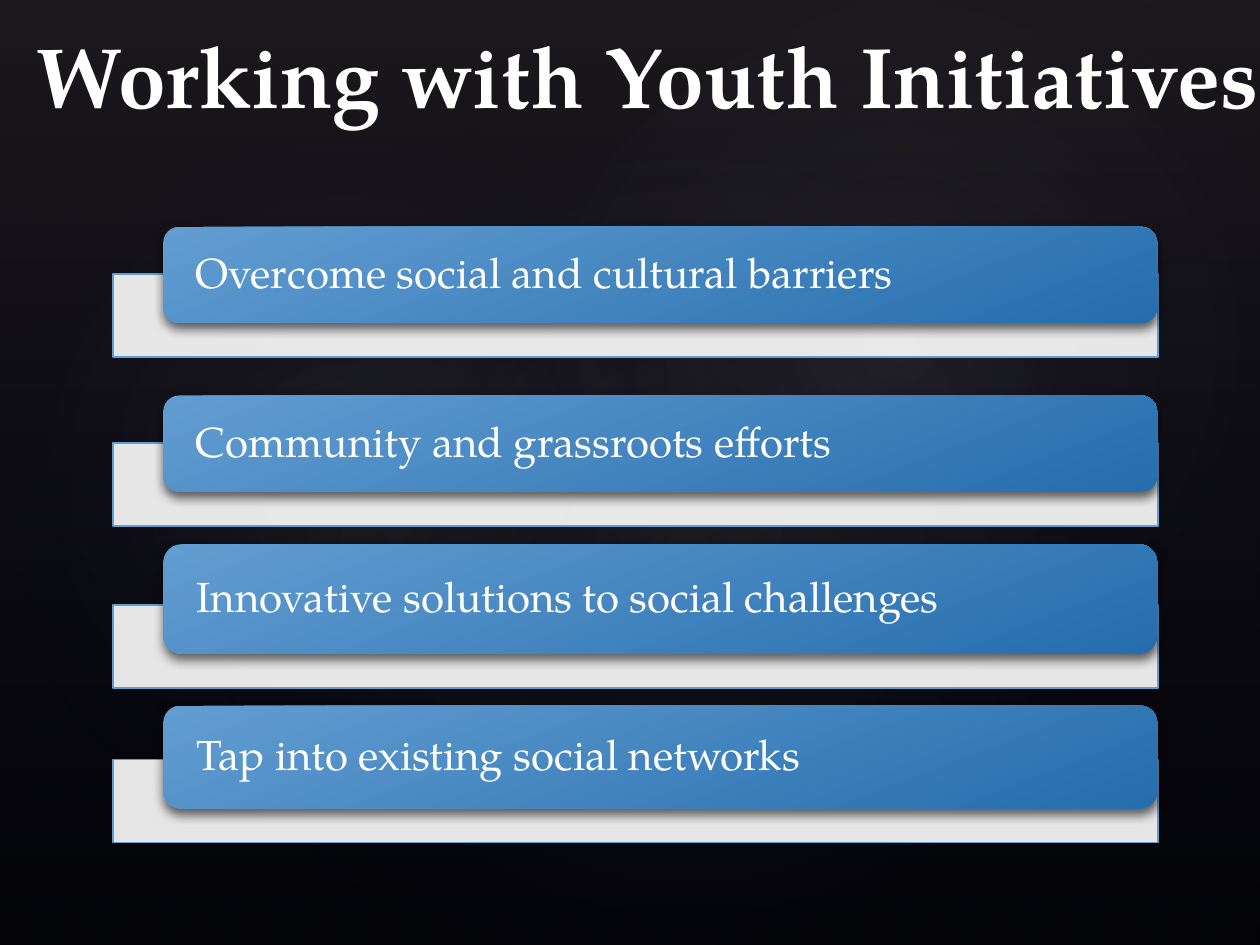
import dataclasses

import pptx
import pptx.dml.color
import pptx.enum.shapes
import pptx.enum.text
import pptx.oxml
import pptx.oxml.ns
import pptx.util

Pt = pptx.util.Pt
RGBColor = pptx.dml.color.RGBColor
Shape = pptx.enum.shapes.MSO_SHAPE
Anchor = pptx.enum.text.MSO_ANCHOR
Align = pptx.enum.text.PP_ALIGN

BLACK = RGBColor(0x00, 0x00, 0x00)
WHITE = RGBColor(0xFF, 0xFF, 0xFF)
PLUM = RGBColor(0x50, 0x46, 0x52)
NAVY = RGBColor(0x24, 0x28, 0x52)
MIST = RGBColor(0xC4, 0xBC, 0xC6)
SKY = RGBColor(0x62, 0x9D, 0xD1)
BLUE = RGBColor(0x25, 0x6D, 0xAD)
FONT = "TeX Gyre Pagella"
NS = pptx.oxml.ns.nsdecls("a")

BAR_LEFT, BAR_WIDTH, BAR_HEIGHT = 64.6, 597, 47.5
CARD_LEFT, CARD_WIDTH = 93.3, 568
OVERLAP = 28  # how far each card reaches down over its bar


@dataclasses.dataclass
class Stop:
    pos: int
    color: RGBColor
    alpha: int = 100


@dataclasses.dataclass
class Glow:
    left: float
    top: float
    width: float
    height: float
    turn: float
    alpha: int


@dataclasses.dataclass
class Card:
    text: str
    top: float
    height: float


GLOWS = [
    Glow(108, 82, 570, 449, 328.7, 7),
    Glow(-21.6, 92, 436, 353, 294.3, 8),
    Glow(257.8, 9.4, 510.5, 374.4, 328.7, 8),
]
CARDS = [
    Card("Overcome social and cultural barriers", 129.6, 55),
    Card("Community and grassroots efforts", 226, 55),
    Card("Innovative solutions to social challenges", 311, 62.6),
    Card("Tap into existing social networks", 403.2, 58.8),
]


def add_shape(slide, kind, left: float, top: float, width: float, height: float):
    """Add a preset shape with no line and no shadow."""
    shape = slide.shapes.add_shape(kind, Pt(left), Pt(top), Pt(width), Pt(height))
    shape.shadow.inherit = False
    shape.line.fill.background()
    return shape


def shade(shape, stops: list[Stop], angle: int | None = None) -> None:
    """Fill with a linear gradient, or a round one when no angle is given."""
    marks = "".join(
        f'<a:gs pos="{stop.pos * 1000}"><a:srgbClr val="{stop.color}">'
        f'<a:alpha val="{stop.alpha * 1000}"/></a:srgbClr></a:gs>'
        for stop in stops
    )
    if angle is None:
        way = ('<a:path path="circle"><a:fillToRect l="50000" t="50000" '
               'r="50000" b="50000"/></a:path>')
    else:
        way = f'<a:lin ang="{angle * 60000}" scaled="0"/>'
    shape.fill.background()
    props = shape._element.spPr
    blank = props.find(pptx.oxml.ns.qn("a:noFill"))
    props.replace(blank, pptx.oxml.parse_xml(
        f"<a:gradFill {NS}><a:gsLst>{marks}</a:gsLst>{way}</a:gradFill>"))


def cast(shape) -> None:
    """Give the shape a soft shadow straight below it."""
    effects = shape._element.spPr.find(pptx.oxml.ns.qn("a:effectLst"))
    effects.append(pptx.oxml.parse_xml(
        f'<a:outerShdw {NS} blurRad="{Pt(6)}" dist="{Pt(3)}" dir="5400000" '
        f'rotWithShape="0"><a:srgbClr val="{BLACK}"><a:alpha val="60000"/>'
        "</a:srgbClr></a:outerShdw>"))


def write(shape, text: str, size: float, align, anchor, bold: bool = False) -> None:
    frame = shape.text_frame
    frame.word_wrap = True
    frame.vertical_anchor = anchor
    line = frame.paragraphs[0]
    line.text = text
    line.alignment = align
    line.font.name = FONT
    line.font.size = Pt(size)
    line.font.bold = bold
    line.font.color.rgb = WHITE


def draw_glow(slide, glow: Glow) -> None:
    shape = add_shape(slide, Shape.OVAL, glow.left, glow.top, glow.width, glow.height)
    shape.rotation = glow.turn
    shade(shape, [Stop(0, MIST, glow.alpha), Stop(58, NAVY, 0)])


def draw_card(slide, card: Card) -> None:
    """Draw a white bar with the blue text card over it."""
    bar = add_shape(slide, Shape.RECTANGLE, BAR_LEFT,
                    card.top + card.height - OVERLAP, BAR_WIDTH, BAR_HEIGHT)
    bar.fill.solid()
    bar.fill.fore_color.rgb = WHITE
    tint = bar._element.spPr.find(".//" + pptx.oxml.ns.qn("a:srgbClr"))
    tint.append(pptx.oxml.parse_xml(f'<a:alpha {NS} val="90000"/>'))
    bar.line.color.rgb = SKY
    bar.line.width = Pt(1)

    box = add_shape(slide, Shape.ROUNDED_RECTANGLE, CARD_LEFT, card.top,
                    CARD_WIDTH, card.height)
    shade(box, [Stop(0, SKY), Stop(100, BLUE)], 69)
    cast(box)
    write(box, card.text, 24, Align.LEFT, Anchor.MIDDLE)
    frame = box.text_frame
    frame.margin_left = frame.margin_right = Pt(16)
    frame.margin_top = frame.margin_bottom = Pt(3)
    frame.paragraphs[0].line_spacing = 0.9


def main() -> None:
    deck = pptx.Presentation()
    deck.slide_width, deck.slide_height = Pt(720), Pt(540)
    slide = deck.slides.add_slide(deck.slide_layouts[6])
    slide.background.fill.solid()
    slide.background.fill.fore_color.rgb = BLACK

    veil = add_shape(slide, Shape.RECTANGLE, 0, 0, 720, 540)
    shade(veil, [Stop(0, PLUM, 36), Stop(100, NAVY, 10)], 90)
    for glow in GLOWS:
        draw_glow(slide, glow)

    title = slide.shapes.add_textbox(Pt(0), Pt(3.6), Pt(740), Pt(72))
    write(title, "Working with Youth Initiatives", 49, Align.CENTER,
          Anchor.BOTTOM, bold=True)
    for card in CARDS:
        draw_card(slide, card)
    deck.save("out.pptx")


if __name__ == "__main__":
    main()
